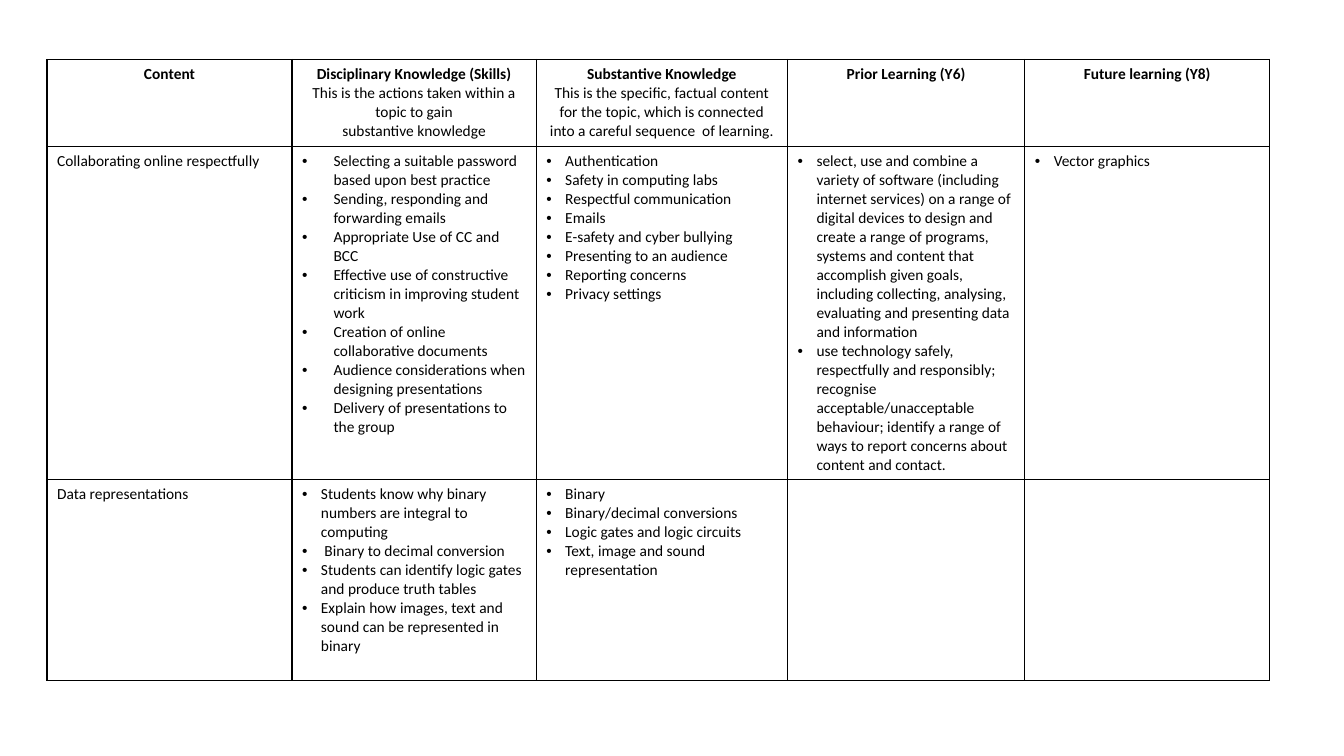
from lxml.etree import SubElement
from pptx import Presentation
from pptx.dml.color import RGBColor
from pptx.enum.text import PP_ALIGN as Align
from pptx.oxml.ns import qn
from pptx.util import Pt

BLACK = RGBColor(0, 0, 0)
WHITE = RGBColor(255, 255, 255)

COL_WIDTHS = [175, 174.5, 179.5, 169.5, 175]
ROW_HEIGHTS = [62, 238, 143.5]

# Column headings: a bold title, then explanatory lines
HEADINGS = [
    ["Content"],
    ["Disciplinary Knowledge (Skills)",
     "This is the actions taken within a",
     "topic to gain",
     "substantive knowledge"],
    ["Substantive Knowledge",
     "This is the specific, factual content",
     "for the topic, which is connected",
     "into a careful sequence  of learning."],
    ["Prior Learning (Y6)"],
    ["Future learning (Y8)"],
]

# Topics: name, then (bullet indent, bullets) for each column
TOPICS = [
    ("Collaborating online respectfully", [
        (22.5, ["Selecting a suitable password based upon best practice",
                "Sending, responding and forwarding emails",
                "Appropriate Use of CC and BCC",
                "Effective use of constructive criticism in improving student work",
                "Creation of online collaborative documents",
                "Audience considerations when designing presentations",
                "Delivery of presentations to the group"]),
        (13.5, ["Authentication",
                "Safety in computing labs",
                "Respectful communication",
                "Emails",
                "E-safety and cyber bullying",
                "Presenting to an audience",
                "Reporting concerns",
                "Privacy settings"]),
        (13.5, ["select, use and combine a variety of software (including internet "
                "services) on a range of digital devices to design and create a range "
                "of programs, systems and content that accomplish given goals, "
                "including collecting, analysing, evaluating and presenting data and "
                "information",
                "use technology safely, respectfully and responsibly; recognise "
                "acceptable/unacceptable behaviour; identify a range of ways to "
                "report concerns about content and contact."]),
        (13.5, ["Vector graphics"]),
    ]),
    ("Data representations", [
        (13.5, ["Students know why binary numbers are integral to computing",
                " Binary to decimal conversion",
                "Students can identify logic gates and produce truth tables",
                "Explain how images, text and sound can be represented in binary"]),
        (13.5, ["Binary",
                "Binary/decimal conversions",
                "Logic gates and logic circuits",
                "Text, image and sound representation"]),
        (13.5, []),
        (13.5, []),
    ]),
]


class Deck:
    font, size, border = "Calibri", Pt(11), Pt(1)

    def __init__(self, width, height):
        self.prs = Presentation()
        self.prs.slide_width, self.prs.slide_height = Pt(width), Pt(height)
        self.s = self.prs.slides.add_slide(self.prs.slide_layouts[6])

    def table(self, left, top, widths, heights):
        frame = self.s.shapes.add_table(len(heights), len(widths), Pt(left), Pt(top),
                                        Pt(sum(widths)), Pt(sum(heights)))
        table = frame.table
        table.first_row = table.horz_banding = False
        for col, width in zip(table.columns, widths):
            col.width = Pt(width)
        for row, height in zip(table.rows, heights):
            row.height = Pt(height)
        for cell in table.iter_cells():
            self.borders(cell)
            cell.fill.solid()
            cell.fill.fore_color.rgb = WHITE
        return table

    def borders(self, cell):
        tc_pr = cell._tc.get_or_add_tcPr()
        for side in ("a:lnL", "a:lnR", "a:lnT", "a:lnB"):
            line = SubElement(tc_pr, qn(side), w=str(self.border))
            fill = SubElement(line, qn("a:solidFill"))
            SubElement(fill, qn("a:srgbClr"), val=str(BLACK))

    def text(self, cell, lines, align=Align.LEFT, bold_first=False, indent=0):
        tf = cell.text_frame
        tf.text = "\n".join(lines)
        for i, p in enumerate(tf.paragraphs):
            p.alignment = align
            p.font.size = self.size
            if indent:
                self.bullet(p, indent)
            for r in p.runs:
                r.font.name, r.font.size = self.font, self.size
                r.font.color.rgb = BLACK
                r.font.bold = bold_first and i == 0

    def bullet(self, p, indent):
        p_pr = p._p.get_or_add_pPr()
        p_pr.set("marL", str(Pt(indent)))
        p_pr.set("indent", str(-Pt(indent)))
        bu_font = p_pr.makeelement(qn("a:buFont"), {"typeface": "Arial"})
        bu_char = p_pr.makeelement(qn("a:buChar"), {"char": "•"})
        p_pr.insert(0, bu_font)
        p_pr.insert(1, bu_char)


def main():
    deck = Deck(960, 540)
    table = deck.table(33.6, 42.5, COL_WIDTHS, ROW_HEIGHTS)

    # Heading row
    for col, lines in enumerate(HEADINGS):
        deck.text(table.cell(0, col), lines, Align.CENTER, bold_first=True)

    # Topic rows
    for row, (topic, columns) in enumerate(TOPICS, 1):
        deck.text(table.cell(row, 0), [topic])
        for col, (indent, bullets) in enumerate(columns, 1):
            if bullets:
                deck.text(table.cell(row, col), bullets, indent=indent)

    deck.prs.save("out.pptx")


if __name__ == "__main__":
    main()
